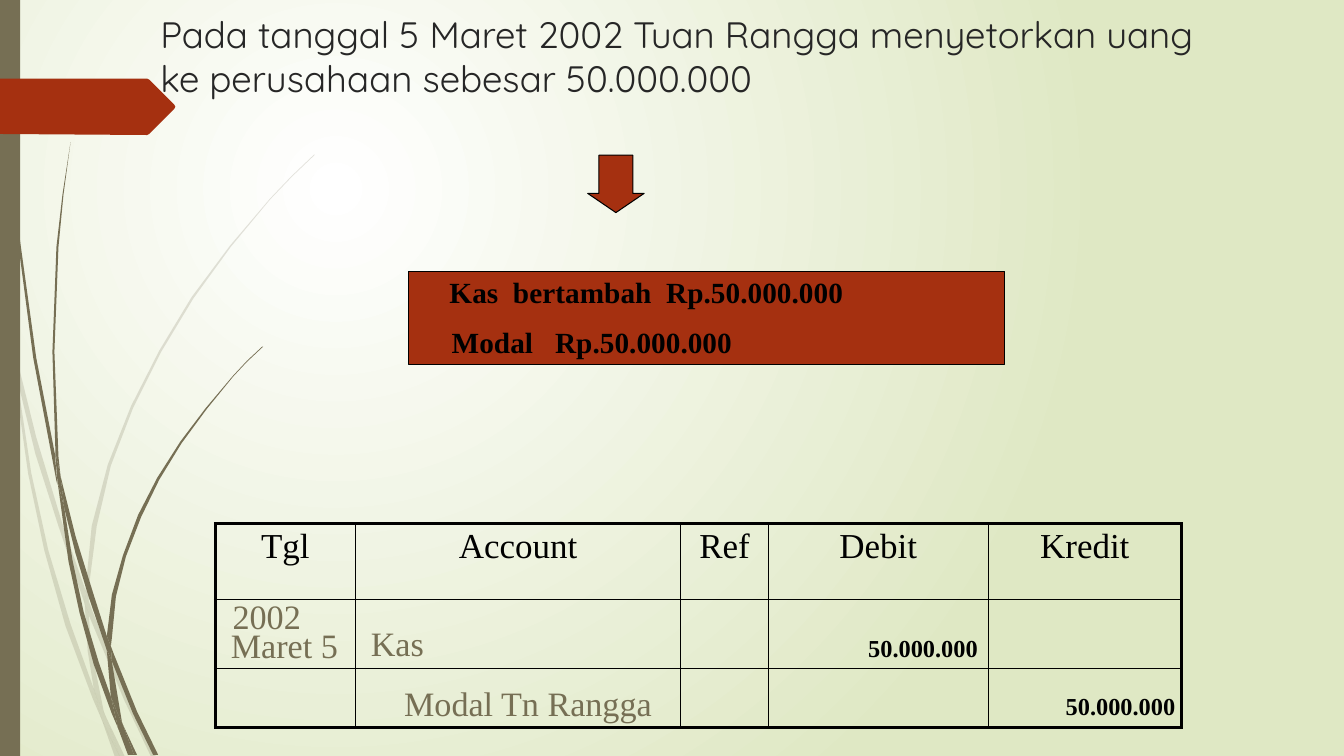
import lxml.etree
import pptx
import pptx.dml.color
import pptx.enum.shapes
import pptx.enum.text
import pptx.oxml
import pptx.oxml.ns
import pptx.util

Pt = pptx.util.Pt
RGBColor = pptx.dml.color.RGBColor
SHAPE = pptx.enum.shapes.MSO_SHAPE
ALIGN = pptx.enum.text.PP_ALIGN
ANCHOR = pptx.enum.text.MSO_ANCHOR

WHITE = RGBColor(0xFF, 0xFF, 0xFF)
PALE_GREEN = RGBColor(0xDF, 0xE8, 0xC4)
OLIVE = RGBColor(0x76, 0x6F, 0x54)
RUST = RGBColor(0xA5, 0x30, 0x10)
CHARCOAL = RGBColor(0x26, 0x26, 0x26)
BLACK = RGBColor(0, 0, 0)
SERIF = "Times New Roman"

WIDTH, HEIGHT = 960, 540
GRID = 0.72
FAINT_GRASS = [
    [(11, 350), (9, 322), (0, 282), (0, 299), (10, 344)],
    [(58, 522), (84, 599), (85, 586), (62, 520), (36, 434), (14, 345), (17, 376), (35, 450)],
    [(92, 607), (88, 596), (88, 610), (123, 694), (150, 751), (155, 751), (127, 692)],
    [(119, 751), (124, 751), (105, 711)],
    [(93, 683), (70, 619), (48, 546), (31, 469), (17, 376), (11, 350), (28, 470), (44, 546),
     (65, 621), (92, 693), (101, 714), (99, 707)],
    [(84, 599), (87, 646), (93, 683), (96, 692), (105, 711), (103, 706), (91, 646),
     (88, 610), (88, 608)],
    [(88, 584), (96, 522), (110, 462), (132, 405), (160, 349), (192, 296), (229, 245),
     (268, 198), (290, 175), (312, 154), (312, 153), (289, 175), (268, 197), (228, 244),
     (190, 295), (158, 348), (130, 403), (107, 461), (91, 522), (85, 584), (85, 586), (88, 596)],
    [(101, 714), (114, 751), (119, 751)],
    [(88, 608), (88, 596), (85, 586), (84, 599)],
    [(96, 692), (93, 683), (99, 707), (101, 714), (119, 751), (105, 711)],
]
DARK_GRASS = [
    [(7, 110), (17, 233), (33, 355), (56, 477), (57, 481), (55, 457), (55, 453), (36, 355),
     (19, 232), (8, 109), (5, 48), (4, 0), (3, 0), (4, 48)],
    [(88, 592), (106, 645), (106, 631), (93, 590), (75, 532), (60, 472), (64, 505), (75, 549)],
    [(113, 649), (110, 641), (111, 656), (132, 708), (152, 749), (157, 749), (136, 706)],
    [(110, 691), (98, 657), (83, 607), (72, 556), (64, 505), (57, 477), (68, 557), (79, 608),
     (93, 659), (111, 708), (117, 722), (116, 717)],
    [(60, 472), (58, 453), (54, 349), (58, 245), (63, 193), (70, 141), (62, 193), (56, 245),
     (52, 349), (55, 449)],
    [(133, 749), (136, 749), (122, 719)],
    [(57, 477), (64, 505), (60, 472), (55, 449), (55, 453)],
    [(111, 633), (115, 592), (125, 552), (140, 513), (158, 476), (180, 440), (205, 406),
     (231, 374), (245, 359), (261, 344), (260, 344), (245, 358), (231, 373), (204, 405),
     (179, 438), (156, 474), (137, 511), (122, 551), (111, 590), (106, 631), (110, 641)],
    [(117, 722), (127, 749), (131, 749)],
    [(106, 645), (110, 691), (116, 706), (122, 719), (121, 716), (111, 656), (109, 651)],
    [(106, 645), (109, 651), (111, 656), (110, 641), (106, 631)],
    [(116, 706), (110, 691), (116, 717), (117, 722), (130, 749), (133, 749), (122, 719)],
]
TAG = [(173, 108), (148, 133), (146, 134), (0, 133), (0, 78), (146, 78), (148, 79),
       (173, 104), (174, 106)]


def add_child(parent, tag, **attributes):
    """Append a drawing element with the given attributes."""
    child = lxml.etree.SubElement(parent, pptx.oxml.ns.qn(tag))
    for name, value in attributes.items():
        child.set(name, str(value))
    return child


def paint(shape, color, outlined=False):
    """Give a shape a flat fill and a thin black outline or none."""
    shape.shadow.inherit = False
    shape.fill.solid()
    shape.fill.fore_color.rgb = color
    if outlined:
        shape.line.color.rgb = BLACK
        shape.line.width = Pt(0.75)
    else:
        shape.line.fill.background()


def add_run(paragraph, text, size, color, font=SERIF, bold=False):
    """Add one formatted run."""
    run = paragraph.add_run()
    run.text = text
    run.font.size = Pt(size)
    run.font.name = font
    run.font.bold = bold
    run.font.color.rgb = color


def add_preset(slide, kind, box, color, outlined=False):
    """Add a painted preset shape in a box."""
    shape = slide.shapes.add_shape(kind, *map(Pt, box))
    paint(shape, color, outlined)
    return shape


def add_label(slide, text, box, size, color, bold=False, align=ALIGN.LEFT,
              anchor=ANCHOR.TOP, wrap=False):
    """Add a one-line label in a box."""
    frame = slide.shapes.add_textbox(*map(Pt, box)).text_frame
    frame.word_wrap = wrap
    frame.vertical_anchor = anchor
    frame.margin_left = frame.margin_right = Pt(6.5)
    frame.margin_top = frame.margin_bottom = Pt(3)
    frame.paragraphs[0].alignment = align
    add_run(frame.paragraphs[0], text, size, color, bold=bold)


def add_outline(slide, corners, color, alpha=None):
    """Draw a closed outline whose corners are given in grid steps."""
    points = [(Pt(x * GRID), Pt(y * GRID)) for x, y in corners]
    builder = slide.shapes.build_freeform(*points[0])
    builder.add_line_segments(points[1:], close=True)
    outline = builder.convert_to_shape()
    paint(outline, color)
    if alpha:
        fill_color = outline.element.spPr.find(".//" + pptx.oxml.ns.qn("a:srgbClr"))
        add_child(fill_color, "a:alpha", val=alpha * 1000)


def add_backdrop(slide):
    """Add the radial background, grass, side bar and red tag."""
    fill = slide.background.fill
    fill.gradient()
    for stop, color in zip(fill.gradient_stops, (WHITE, PALE_GREEN)):
        stop.color.rgb = color
    gradient = slide.element.find(".//" + pptx.oxml.ns.qn("a:gradFill"))
    linear = gradient.find(pptx.oxml.ns.qn("a:lin"))
    if linear is not None:
        gradient.remove(linear)
    radial = add_child(gradient, "a:path", path="circle")
    add_child(radial, "a:fillToRect", l=25000, t=25000, r=75000, b=75000)
    for corners in FAINT_GRASS:
        add_outline(slide, corners, OLIVE, alpha=20)
    for corners in DARK_GRASS:
        add_outline(slide, corners, OLIVE)
    add_preset(slide, SHAPE.RECTANGLE, (0, 0, 14.4, HEIGHT), OLIVE)
    add_outline(slide, TAG, RUST)


def add_title(slide, box):
    """Place the title placeholder in front of the backdrop."""
    title = slide.shapes.title
    title.left, title.top, title.width, title.height = map(Pt, box)
    title.element.getparent().append(title.element)
    frame = title.text_frame
    frame.word_wrap = True
    frame.vertical_anchor = ANCHOR.TOP
    paragraph = frame.paragraphs[0]
    paragraph.alignment = ALIGN.LEFT
    add_run(paragraph, "Pada tanggal 5 Maret 2002 Tuan Rangga menyetorkan uang "
            "ke perusahaan sebesar 50.000.000", 26.2, CHARCOAL, "Quicksand")


def add_effect(slide, box):
    """Add the down arrow and the box with the effect on cash and capital."""
    left, top, width, height = box
    arrow = add_preset(slide, SHAPE.DOWN_ARROW, (left + 127.8, top - 83, 40.3, 41), RUST, True)
    arrow.adjustments[0], arrow.adjustments[1] = 0.6, 0.34
    add_preset(slide, SHAPE.RECTANGLE, box, RUST, True)
    for text, x, y, label_width in [("Kas  bertambah  Rp.50.000.000", 22.6, -0.9, 297),
                                    ("Modal   Rp.50.000.000", 24.1, 34.5, 215)]:
        add_label(slide, text, (left + x, top + y, label_width, 32), 20.95, BLACK, bold=True)


def set_border(cell, side, width):
    """Draw one black cell border."""
    line = add_child(cell._tc.get_or_add_tcPr(), "a:ln" + side, w=int(Pt(width)))
    color = add_child(add_child(line, "a:solidFill"), "a:srgbClr")
    color.set("val", str(BLACK))


def add_journal(slide, box):
    """Add the journal table and the entries laid over it."""
    left, top = box[:2]
    headings = ["Tgl", "Account", "Ref", "Debit", "Kredit"]
    widths, heights = [100.1, 232.4, 62.6, 157, 138], [54, 49.7, 41.8]
    table = slide.shapes.add_table(len(heights), len(widths), *map(Pt, box)).table
    table.first_row = table.horz_banding = False
    for column, width in zip(table.columns, widths):
        column.width = Pt(width)
    for row_index, height in enumerate(heights):
        table.rows[row_index].height = Pt(height)
        for column_index, heading in enumerate(headings):
            cell = table.cell(row_index, column_index)
            cell.margin_top = cell.margin_bottom = Pt(3)
            outer = {"L": column_index == 0, "R": column_index == len(widths) - 1,
                     "T": row_index == 0, "B": row_index == len(heights) - 1}
            for side, is_outer in outer.items():
                set_border(cell, side, 2.25 if is_outer else 1)
            cell.fill.background()
            if row_index == 0:
                paragraph = cell.text_frame.paragraphs[0]
                paragraph.alignment = ALIGN.CENTER
                add_run(paragraph, heading, 25, BLACK)
    entries = [("Kas", 104.6, 76.2, 137.5, 18), ("Modal Tn Rangga", 128.4, 118.2, 207, 20),
               ("2002", 5.9, 55, 88, 22.3), ("Maret 5", 4.6, 78.9, 108.7, 15)]
    for text, x, y, width, height in entries:
        add_label(slide, text, (left + x, top + y, width, height), 24.4, OLIVE,
                  anchor=ANCHOR.MIDDLE, wrap=True)
    for x, y in [(458.9, 75.4), (600, 116.5)]:
        add_label(slide, "50.000.000", (left + x, top + y, 92.2, 27.4), 17.4, BLACK,
                  bold=True, align=ALIGN.RIGHT)


def main():
    """Build and save the slide."""
    presentation = pptx.Presentation()
    presentation.slide_width, presentation.slide_height = Pt(WIDTH), Pt(HEIGHT)
    slide = presentation.slides.add_slide(presentation.slide_layouts[5])
    add_backdrop(slide)
    add_title(slide, (107.3, 5, 753, 72))
    add_effect(slide, (292, 193.9, 425.8, 66.5))
    add_journal(slide, (153.8, 374, 690.1, 145.5))
    presentation.save("out.pptx")


if __name__ == "__main__":
    main()
